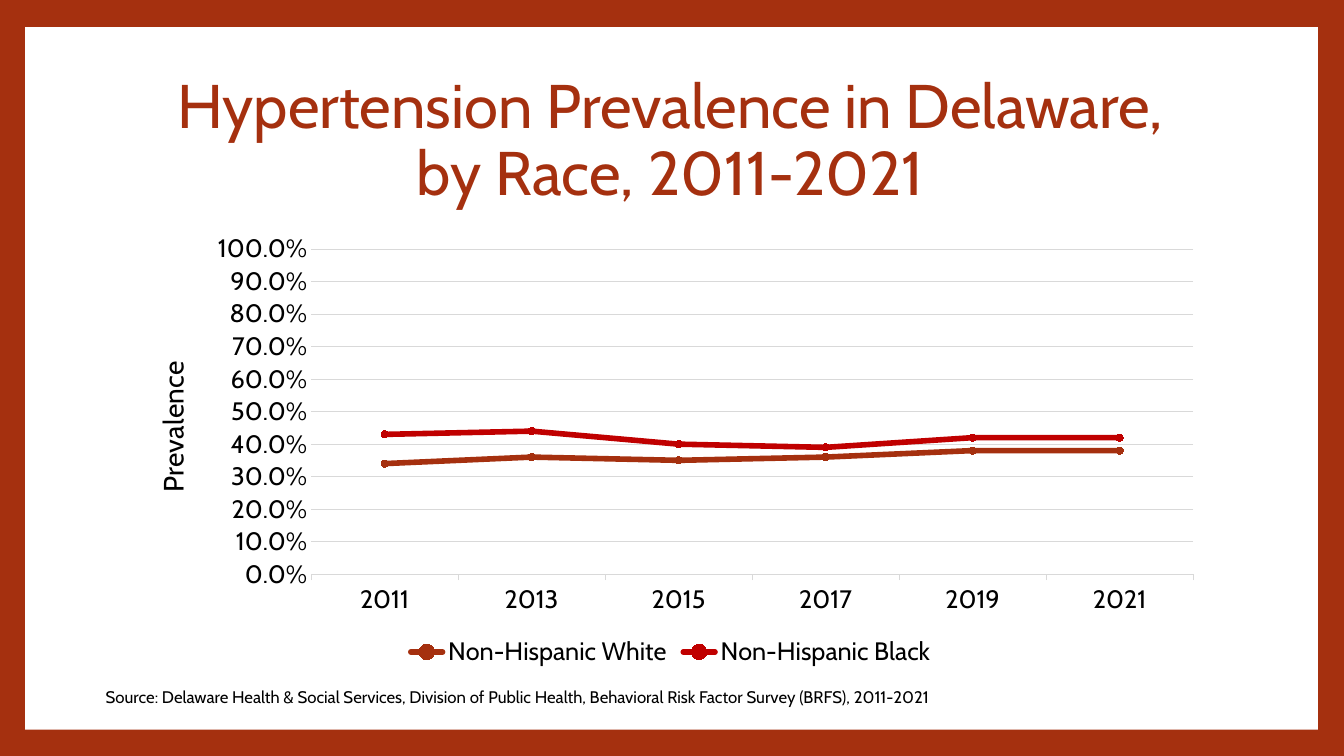
from dataclasses import dataclass

from pptx import Presentation
from pptx.chart.data import CategoryChartData
from pptx.dml.color import RGBColor
from pptx.enum.chart import XL_CHART_TYPE, XL_LEGEND_POSITION, XL_MARKER_STYLE, XL_TICK_MARK
from pptx.enum.shapes import MSO_SHAPE
from pptx.enum.text import MSO_ANCHOR, PP_ALIGN
from pptx.oxml import parse_xml
from pptx.oxml.ns import nsdecls, qn
from pptx.util import Inches, Pt


@dataclass(frozen=True)
class Theme:
    font: str = "Cabin"
    rust: RGBColor = RGBColor.from_string("A5300F")
    red: RGBColor = RGBColor.from_string("C00000")
    grid: RGBColor = RGBColor.from_string("D9D9D9")
    black: RGBColor = RGBColor.from_string("000000")
    white: RGBColor = RGBColor.from_string("FFFFFF")
    title: int = 44
    axis_title: int = 20
    label: int = 18
    source: int = 12
    chart: int = 10


THEME = Theme()
YEARS = ["2011", "2013", "2015", "2017", "2019", "2021"]
SERIES = [
    ("Non-Hispanic White", [0.34, 0.36, 0.35, 0.36, 0.38, 0.38], THEME.rust),
    ("Non-Hispanic Black", [0.43, 0.44, 0.4, 0.39, 0.42, 0.42], THEME.red),
]


def style_font(font, size, color=THEME.black):
    font.name = THEME.font
    font.size = Pt(size)
    font.bold = False
    font.color.rgb = color


def style_line(line, color, width):
    line.color.rgb = color
    line.width = Pt(width)


def add_frame(s, box):
    fill = s.background.fill
    fill.solid()
    fill.fore_color.rgb = THEME.rust
    sp = s.shapes.add_shape(MSO_SHAPE.RECTANGLE, *map(Inches, box))
    sp.shadow.inherit = False
    sp.fill.solid()
    sp.fill.fore_color.rgb = THEME.white
    sp.line.fill.background()


def add_text(s, box, text, size, color=THEME.black, align=PP_ALIGN.LEFT,
             anchor=MSO_ANCHOR.TOP, spacing=1.0):
    tf = s.shapes.add_textbox(*map(Inches, box)).text_frame
    tf.word_wrap = True
    tf.vertical_anchor = anchor
    p = tf.paragraphs[0]
    p.text = text
    p.alignment = align
    p.line_spacing = spacing
    for r in p.runs:
        style_font(r.font, size, color)


def set_layout(parent, index, **places):
    for old in parent.findall(qn("c:layout")):
        parent.remove(old)
    target = '<c:layoutTarget val="inner"/>' if "w" in places else ""
    modes = "".join(f'<c:{k}Mode val="edge"/>' for k in "xy")
    values = "".join(f'<c:{k} val="{v}"/>' for k, v in places.items())
    parent.insert(index, parse_xml(
        f'<c:layout {nsdecls("c")}><c:manualLayout>{target}{modes}{values}'
        "</c:manualLayout></c:layout>"))


def style_value_axis(axis):
    axis.minimum_scale, axis.maximum_scale, axis.major_unit = 0, 1, 0.1
    axis.major_tick_mark = XL_TICK_MARK.NONE
    axis.format.line.fill.background()
    axis.has_major_gridlines = True
    style_line(axis.major_gridlines.format.line, THEME.grid, 0.75)
    axis.tick_labels.number_format = "0.0%"
    axis.tick_labels.number_format_is_linked = False
    style_font(axis.tick_labels.font, THEME.label)
    title = axis.axis_title
    p = title.text_frame.paragraphs[0]
    r = p.add_run()
    r.text = "Prevalence"
    style_font(r.font, THEME.axis_title)
    body = title.element.find(".//" + qn("a:bodyPr"))
    body.set("rot", "-5400000")
    body.set("vert", "horz")
    set_layout(title.element, 1, x=0.02, y=0.29)


def style_category_axis(axis):
    axis.major_tick_mark = XL_TICK_MARK.OUTSIDE
    style_line(axis.format.line, THEME.grid, 0.75)
    style_font(axis.tick_labels.font, THEME.label)


def style_series(series, color):
    series.smooth = False
    style_line(series.format.line, color, 4)
    marker = series.marker
    marker.style = XL_MARKER_STYLE.CIRCLE
    marker.size = 5
    marker.format.fill.solid()
    marker.format.fill.fore_color.rgb = color
    style_line(marker.format.line, color, 0.75)
    for ln in series.format.element.iter(qn("a:ln")) if hasattr(series.format, "element") else ():
        ln.set("cap", "rnd")


def add_prevalence_chart(s, box):
    data = CategoryChartData(number_format="0.0%")
    data.categories = YEARS
    for name, values, _ in SERIES:
        data.add_series(name, values)
    chart = s.shapes.add_chart(
        XL_CHART_TYPE.LINE_MARKERS, *map(Inches, box), data).chart
    style_font(chart.font, THEME.chart)
    chart.has_title = False
    chart.has_legend = True
    chart.legend.position = XL_LEGEND_POSITION.BOTTOM
    chart.legend.include_in_layout = False
    style_font(chart.legend.font, THEME.label)
    style_value_axis(chart.value_axis)
    style_category_axis(chart.category_axis)
    plot = chart.plots[0]
    plot.vary_by_categories = False
    for series, (_, _, color) in zip(plot.series, SERIES):
        style_series(series, color)
    plot_area = chart.element.find(".//" + qn("c:plotArea"))
    for ln in plot_area.findall(".//" + qn("c:ser") + "/" + qn("c:spPr") + "/" + qn("a:ln")):
        ln.set("cap", "rnd")
    set_layout(plot_area, 0, x=0.17, y=0.05, w=0.81, h=0.73)


def build_slide(prs):
    s = prs.slides.add_slide(prs.slide_layouts[6])
    left, width = 1.25, 10.8
    add_frame(s, (0.25, 0.27, 12.82, 6.97))
    add_text(s, (left, 0.67, width, 1.48),
             "Hypertension Prevalence in Delaware,\vby Race, 2011-2021",
             THEME.title, THEME.rust, PP_ALIGN.CENTER, MSO_ANCHOR.MIDDLE, 0.9)
    add_text(s, (0.95, 6.76, 12.08, 0.3),
             "Source: Delaware Health & Social Services, Division of Public Health, "
             "Behavioral Risk Factor Survey (BRFS), 2011-2021", THEME.source)
    add_prevalence_chart(s, (left, 2.25, width, 4.42))


def main():
    prs = Presentation()
    prs.slide_width, prs.slide_height = Inches(13.33), Inches(7.5)
    build_slide(prs)
    prs.save("out.pptx")


if __name__ == "__main__":
    main()
